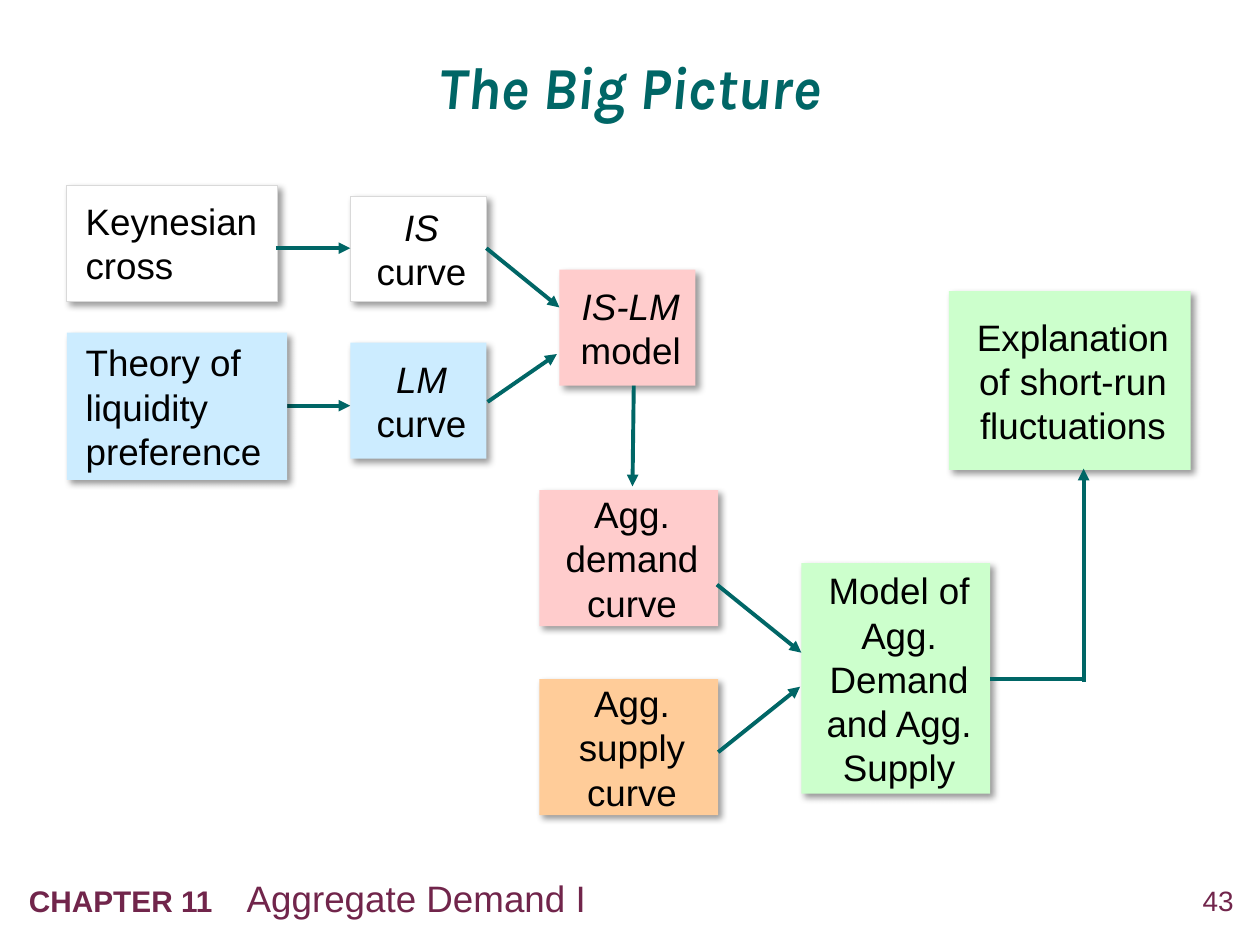
"""Build the slide that links the short-run models of the economy."""
from dataclasses import dataclass

from lxml import etree
from pptx import Presentation
from pptx import util as u
from pptx.dml.color import RGBColor
from pptx.enum import shapes, text
from pptx.oxml import parse_xml
from pptx.oxml.ns import qn

DRAWING_NS = "http://schemas.openxmlformats.org/drawingml/2006/main"
TEAL, PLUM, BLACK = "006666", "71254B", "000000"
WHITE, BLUE, PINK, ORANGE, GREEN = "FFFFFF", "CCECFF", "FFCCCC", "FFCC99", "CCFFCC"
LEFT, CENTER, RIGHT = text.PP_ALIGN.LEFT, text.PP_ALIGN.CENTER, text.PP_ALIGN.RIGHT
SHADOW = (
    f'<a:effectLst xmlns:a="{DRAWING_NS}"><a:outerShdw blurRad="50800" dist="38100" '
    'dir="2700000" algn="tl" rotWithShape="0"><a:srgbClr val="000000">'
    '<a:alpha val="40000"/></a:srgbClr></a:outerShdw></a:effectLst>'
)


@dataclass(frozen=True)
class Span:
    words: str
    size: float = 21
    color: str = BLACK
    bold: bool = False
    italic: bool = False
    font: str = "Arial"


@dataclass(frozen=True)
class Concept:
    left: float
    top: float
    width: float
    height: float
    fill: str
    spans: tuple[Span, ...]
    align: text.PP_ALIGN = CENTER


@dataclass(frozen=True)
class Link:
    start: tuple[float, float]
    end: tuple[float, float]
    arrow: bool = True


CONCEPTS = (
    Concept(0.53, 1.47, 1.67, 0.92, WHITE, (Span("Keynesian\ncross"),), LEFT),
    Concept(0.53, 2.64, 1.75, 1.17, BLUE, (Span("Theory of liquidity preference"),), LEFT),
    Concept(2.78, 1.56, 1.08, 0.83, WHITE, (Span("IS\n", italic=True), Span("curve"))),
    Concept(2.78, 2.72, 1.08, 0.92, BLUE, (Span("LM", italic=True), Span(" curve"))),
    Concept(4.44, 2.14, 1.08, 0.92, PINK, (Span("IS-LM\n", italic=True), Span("model"))),
    Concept(4.28, 3.89, 1.42, 1.08, PINK, (Span("Agg. demand\ncurve"),)),
    Concept(4.28, 5.39, 1.42, 1.08, ORANGE, (Span("Agg. supply\ncurve"),)),
    Concept(6.36, 4.47, 1.5, 1.83, GREEN, (Span("Model of Agg. Demand and Agg. Supply"),)),
    Concept(7.53, 2.31, 1.92, 1.42, GREEN, (Span("Explanation of short-run fluctuations"),)),
)
LIQUIDITY_LINK = Link((2.19, 3.22), (2.78, 3.22))
LINKS = (
    Link((2.19, 1.97), (2.78, 1.97)),
    Link((3.86, 1.97), (4.44, 2.44)),
    Link((3.87, 3.19), (4.42, 2.81)),
    Link((5.03, 3.06), (5.02, 3.86)),
    Link((5.69, 4.64), (6.36, 5.18)),
    Link((5.7, 5.97), (6.35, 5.45)),
    Link((7.86, 5.39), (8.62, 5.39), arrow=False),
    Link((8.6, 5.41), (8.6, 3.72)),
)


def rgb(value: str) -> RGBColor:
    return RGBColor.from_string(value)


def set_margins(frame, left: float, top: float, right: float, bottom: float) -> None:
    frame.margin_left, frame.margin_top = u.Inches(left), u.Inches(top)
    frame.margin_right, frame.margin_bottom = u.Inches(right), u.Inches(bottom)
    frame.word_wrap = True


def write(para, spans: tuple[Span, ...], align: text.PP_ALIGN) -> None:
    para.alignment = align
    for span in spans:
        for index, line in enumerate(span.words.split("\n")):
            if index:
                para.add_line_break()
            if not line:
                continue
            run = para.add_run()
            run.text = line
            font = run.font
            font.name, font.size = span.font, u.Pt(span.size)
            font.bold, font.italic = span.bold, span.italic
            font.color.rgb = rgb(span.color)


def add_concept(page, concept: Concept) -> None:
    box = page.shapes.add_shape(
        shapes.MSO_SHAPE.RECTANGLE, u.Inches(concept.left), u.Inches(concept.top),
        u.Inches(concept.width), u.Inches(concept.height))
    box.fill.solid()
    box.fill.fore_color.rgb = rgb(concept.fill)
    if concept.fill == WHITE:
        box.line.color.rgb = rgb("D9D9D9")
        box.line.width = u.Pt(0.5)
    else:
        box.line.fill.background()
    box._element.spPr.append(parse_xml(SHADOW))
    frame = box.text_frame
    set_margins(frame, 0.15, 0.05, 0.1, 0.05)
    frame.vertical_anchor = text.MSO_ANCHOR.MIDDLE
    write(frame.paragraphs[0], concept.spans, concept.align)


def add_link(page, link: Link) -> None:
    points = [u.Inches(value) for value in (*link.start, *link.end)]
    connector = page.shapes.add_connector(shapes.MSO_CONNECTOR.STRAIGHT, *points)
    connector.line.color.rgb = rgb(TEAL)
    connector.line.width = u.Pt(2.25)
    if link.arrow:
        etree.SubElement(connector.line._get_or_add_ln(), qn("a:tailEnd"), type="triangle")
    etree.SubElement(connector._element.spPr, qn("a:effectLst"))


def add_title(page) -> None:
    title = page.shapes.title
    title.left, title.top = u.Inches(0), u.Inches(0.16)
    title.width, title.height = u.Inches(10), u.Inches(1.1)
    frame = title.text_frame
    set_margins(frame, 0, 0, 0, 0)
    frame.vertical_anchor = text.MSO_ANCHOR.MIDDLE
    para = frame.paragraphs[0]
    para.line_spacing = 0.95
    write(para, (Span("The Big Picture", 34, TEAL, True, True, "Karla"),), CENTER)


def add_footer(page) -> None:
    number = page.shapes.add_textbox(
        u.Inches(9.24), u.Inches(7.01), u.Inches(0.55), u.Inches(0.32))
    set_margins(number.text_frame, 0, 0, 0, 0)
    write(number.text_frame.paragraphs[0], (Span("43", 16, PLUM),), RIGHT)

    chapter = page.shapes.add_textbox(
        u.Inches(0.13), u.Inches(6.9), u.Inches(8.18), u.Inches(0.45))
    set_margins(chapter.text_frame, 0.1, 0.05, 0.1, 0.05)
    para = chapter.text_frame.paragraphs[0]
    write(para, (Span("CHAPTER 11\t", 17, PLUM, True),
                 Span("Aggregate Demand I", 21, PLUM)), LEFT)
    stops = etree.SubElement(para._p.get_or_add_pPr(), qn("a:tabLst"))
    etree.SubElement(stops, qn("a:tab"), pos=str(u.Inches(1.73)), algn="l")


def main() -> None:
    deck = Presentation()
    deck.slide_width, deck.slide_height = u.Inches(10), u.Inches(7.5)
    page = deck.slides.add_slide(deck.slide_layouts[5])
    add_footer(page)
    add_title(page)
    add_link(page, LIQUIDITY_LINK)
    for concept in CONCEPTS:
        add_concept(page, concept)
    for link in LINKS:
        add_link(page, link)
    deck.save("out.pptx")


if __name__ == "__main__":
    main()
